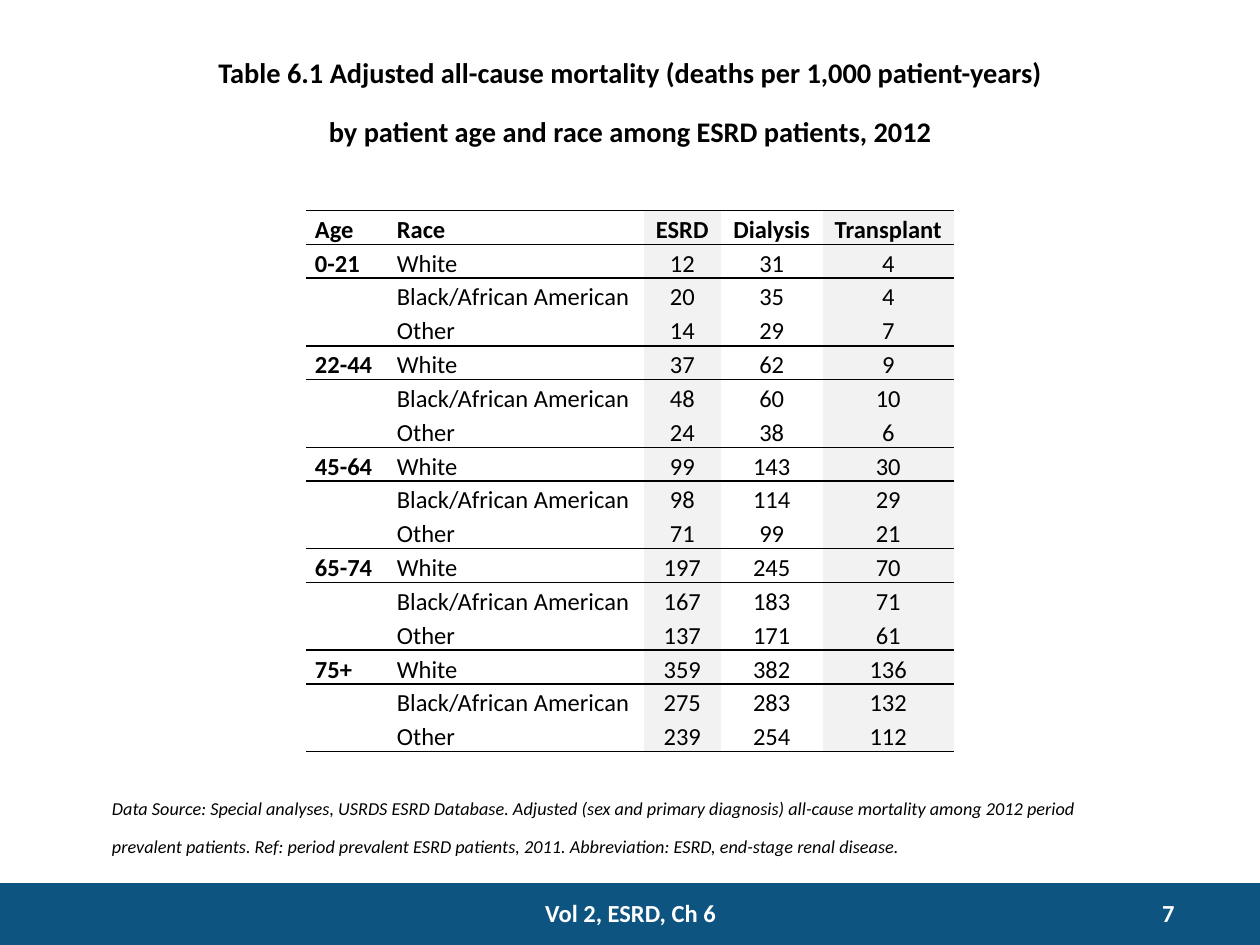
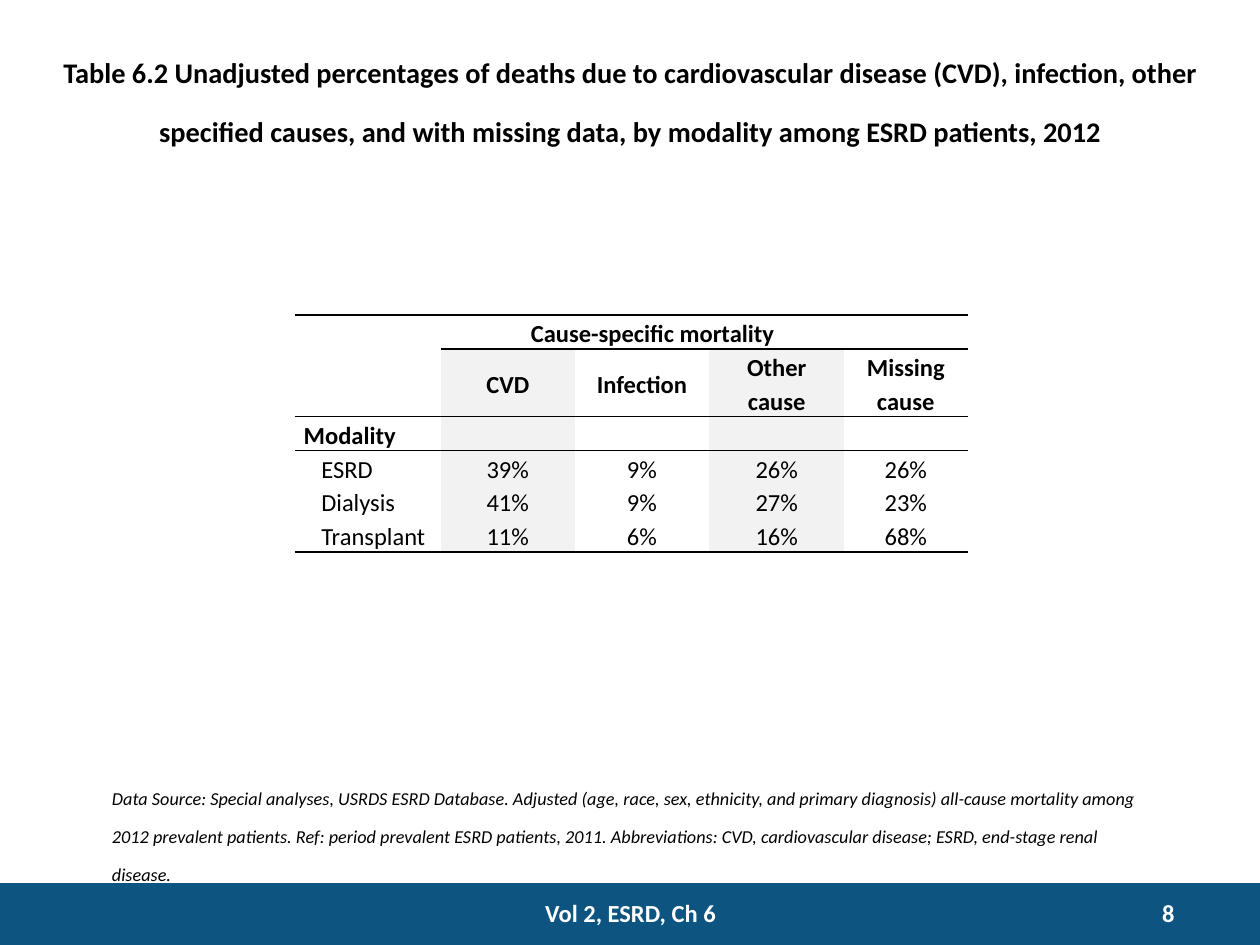
import pptx
import pptx.util
import pptx.dml.color
import pptx.enum.shapes
import pptx.enum.text
from lxml import etree

Inches, Pt = pptx.util.Inches, pptx.util.Pt
RGBColor = pptx.dml.color.RGBColor
PP_ALIGN = pptx.enum.text.PP_ALIGN
MSO_ANCHOR = pptx.enum.text.MSO_ANCHOR

BLUE = RGBColor(0x0E, 0x54, 0x80)
BLACK = RGBColor(0, 0, 0)
WHITE = RGBColor(0xFF, 0xFF, 0xFF)
SHADE = RGBColor(0xF2, 0xF2, 0xF2)
FONT = "Calibri"
A = "{http://schemas.openxmlformats.org/drawingml/2006/main}"
NO_STYLE = "{2D5ABB26-0587-4C30-8999-92F81FD0307C}"

RACES = ["White", "Black/African American", "Other"]
DEATH_RATES = {
    "0-21": [(12, 31, 4), (20, 35, 4), (14, 29, 7)],
    "22-44": [(37, 62, 9), (48, 60, 10), (24, 38, 6)],
    "45-64": [(99, 143, 30), (98, 114, 29), (71, 99, 21)],
    "65-74": [(197, 245, 70), (167, 183, 71), (137, 171, 61)],
    "75+": [(359, 382, 136), (275, 283, 132), (239, 254, 112)],
}
rate_rows = [["Age", "Race", "ESRD", "Dialysis", "Transplant"]]
for age, rates in DEATH_RATES.items():
    for n, (race, values) in enumerate(zip(RACES, rates)):
        rate_rows.append([age if n == 0 else "", race, *values])

cause_rows = [
    ["", "Cause-specific mortality", "", "", "", ""],
    ["", "CVD", "Infection", "Other cause", "Missing cause", ""],
    ["Modality", "", "", "", "", ""],
    ["ESRD", "39%", "9%", "26%", "26%", ""],
    ["Dialysis", "41%", "9%", "27%", "23%", ""],
    ["Transplant", "11%", "6%", "16%", "68%", ""],
]
cause_merges = [(0, 0, 1, 0), (0, 1, 0, 4)] + [(i, 4, i, 5) for i in range(1, 6)]

# "lines" is the number of text lines per row, "rules" the rows underlined
SLIDES = [
    dict(number="7",
         title=["Table 6.1 Adjusted all-cause mortality (deaths per 1,000 patient-years)",
                "by patient age and race among ESRD patients, 2012"],
         note="Data Source: Special analyses, USRDS ESRD Database. Adjusted (sex and "
              "primary diagnosis) all-cause mortality among 2012 period prevalent "
              "patients. Ref: period prevalent ESRD patients, 2011. Abbreviation: "
              "ESRD, end-stage renal disease.",
         note_top=6.25, note_height=0.5,
         rows=rate_rows, left=2.43, top=1.67, height=4.29,
         widths=[0.65, 2.03, 0.61, 0.81, 1.04], lines=[1] * 16, merges=[],
         rules=range(0, 16, 3), shaded=(2, 4), shade_from=0,
         head_rows=1, left_columns=2, indent=0),
    dict(number="8",
         title=["Table 6.2 Unadjusted percentages of deaths due to cardiovascular "
                "disease (CVD), infection, other specified causes, and with missing "
                "data, by modality among ESRD patients, 2012"],
         note="Data Source: Special analyses, USRDS ESRD Database. Adjusted (age, race, "
              "sex, ethnicity, and primary diagnosis) all-cause mortality among 2012 "
              "prevalent patients. Ref: period prevalent ESRD patients, 2011. "
              "Abbreviations: CVD, cardiovascular disease; ESRD, end-stage renal "
              "disease.",
         note_top=6.17, note_height=0.71,
         rows=cause_rows, left=2.34, top=2.5, height=1.88,
         widths=[1.16, 1.06, 1.07, 1.07, 0.16, 0.82], lines=[1, 2, 1, 1, 1, 1],
         merges=cause_merges, rules=(0, 1, 5), shaded=(1, 3), shade_from=1,
         head_rows=3, left_columns=1, indent=0.14),
]


def write(tf, paragraphs, size, color, align, bold=False, italic=False, raised=False):
    """Fill a text frame; raised text is set as a 30% superscript."""
    tf.word_wrap = True
    for n, text in enumerate(paragraphs):
        p = tf.paragraphs[0] if n == 0 else tf.add_paragraph()
        p.alignment = align
        p.font.name, p.font.size = FONT, Pt(size)
        p.font.bold, p.font.italic = bold, italic
        p.font.color.rgb = color
        if text:
            r = p.add_run()
            r.text = text
            if raised:
                r._r.get_or_add_rPr().set("baseline", "30000")
        else:
            etree.SubElement(p._p, A + "endParaRPr", sz=str(size * 100))


def add_rule(cell, side):
    ln = etree.SubElement(cell._tc.get_or_add_tcPr(), A + side, w=str(Pt(1)))
    fill = etree.SubElement(ln, A + "solidFill")
    etree.SubElement(fill, A + "srgbClr", val=str(BLACK))


prs = pptx.Presentation()
prs.slide_width, prs.slide_height = Inches(10), Inches(7.5)

for d in SLIDES:
    s = prs.slides.add_slide(prs.slide_layouts[5])

    band = s.shapes.add_shape(pptx.enum.shapes.MSO_SHAPE.RECTANGLE,
                              0, Inches(7.01), Inches(10), Inches(0.5))
    band.shadow.inherit = False
    band.fill.solid()
    band.fill.fore_color.rgb = BLUE
    band.line.fill.background()

    note = s.shapes.add_textbox(Inches(0.79), Inches(d["note_top"]),
                                Inches(8.42), Inches(d["note_height"]))
    write(note.text_frame, [d["note"]], 18, BLACK, PP_ALIGN.LEFT,
          italic=True, raised=True)

    title = s.shapes.title
    title.left, title.top = 0, Inches(0.34)
    title.width, title.height = Inches(10), Inches(0.73)
    title.text_frame.vertical_anchor = MSO_ANCHOR.TOP
    write(title.text_frame, d["title"], 28, BLACK, PP_ALIGN.CENTER,
          bold=True, raised=True)
    for tf in (note.text_frame, title.text_frame):
        tf.auto_size = pptx.enum.text.MSO_AUTO_SIZE.SHAPE_TO_FIT_TEXT

    for text, left, width, height, align in (
            ("Vol 2, ESRD, Ch 6", 3.92, 2.17, 0.33, PP_ALIGN.CENTER),
            (d["number"], 8.42, 1, 0.3, PP_ALIGN.RIGHT)):
        footer = s.shapes.add_textbox(Inches(left), Inches(7.08),
                                      Inches(width), Inches(height))
        write(footer.text_frame, [text], 14, WHITE, align, bold=True)

    table = s.shapes.add_table(len(d["rows"]), len(d["widths"]),
                               Inches(d["left"]), Inches(d["top"]),
                               Inches(sum(d["widths"])), Inches(d["height"])).table
    table.first_row = table.horz_banding = False
    table._tbl.tblPr.find(A + "tableStyleId").text = NO_STYLE
    for column, width in zip(table.columns, d["widths"]):
        column.width = Inches(width)
    for row, lines in zip(table.rows, d["lines"]):
        row.height = Inches(d["height"] * lines / sum(d["lines"]))
    for top, left, bottom, right in d["merges"]:
        table.cell(top, left).merge(table.cell(bottom, right))

    for i, values in enumerate(d["rows"]):
        for j, value in enumerate(values):
            cell = table.cell(i, j)
            cell.margin_left = cell.margin_right = Inches(0.07)
            cell.margin_top = cell.margin_bottom = 0
            cell.vertical_anchor = MSO_ANCHOR.MIDDLE
            p = cell.text_frame.paragraphs[0]
            p.line_spacing = 1.15
            if j == 0 and i >= d["head_rows"]:
                p._p.get_or_add_pPr().set("marL", str(Inches(d["indent"])))
            write(cell.text_frame, [str(value)], 14, BLACK,
                  PP_ALIGN.LEFT if j < d["left_columns"] else PP_ALIGN.CENTER,
                  bold=i < d["head_rows"] or (j == 0 and not d["indent"]))
            if i == 0 or (i - 1 in d["rules"] and not cell.is_spanned):
                add_rule(cell, "lnT")
            if i in d["rules"] and not (cell.is_merge_origin and cell.span_height > 1):
                add_rule(cell, "lnB")
            if j in d["shaded"] and i >= d["shade_from"]:
                cell.fill.solid()
                cell.fill.fore_color.rgb = SHADE
            else:
                cell.fill.background()

prs.save("out.pptx")
